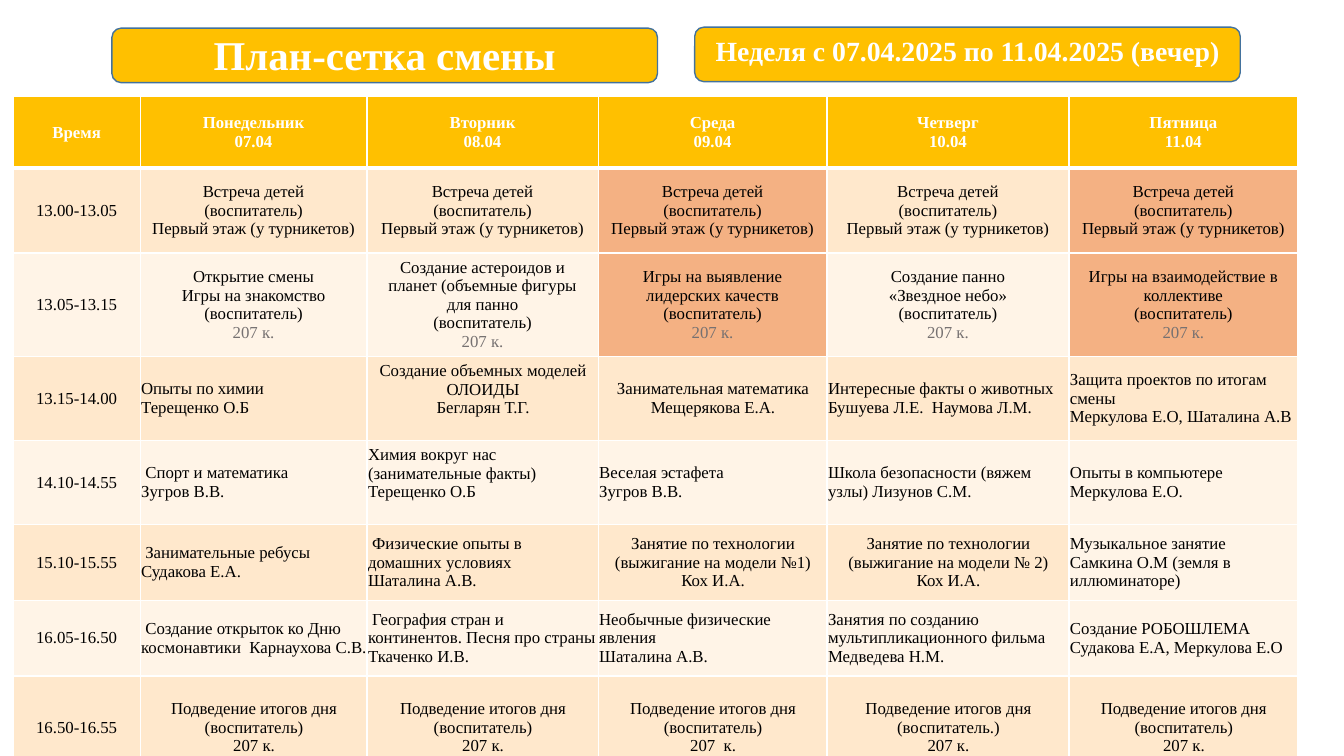
from dataclasses import dataclass

from lxml.etree import SubElement
from pptx import Presentation
from pptx.dml.color import RGBColor
from pptx.enum.shapes import MSO_SHAPE as Shape
from pptx.enum.text import MSO_ANCHOR as Anchor, MSO_AUTO_SIZE as Fit, PP_ALIGN as Align
from pptx.oxml.ns import qn
from pptx.util import Emu, Inches, Pt

WIDE, HIGH = Inches(13.33), Inches(7.5)
FACE = "Times New Roman"
GOLD, WHITE, BLACK, GREY, BLUE = "FFC000", "FFFFFF", "000000", "767171", "43729D"
SAND, CREAM, CORAL = "FFE8CC", "FFF4E7", "F4B183"

WIDTHS = (9.45, 16.88, 17.2, 17.03, 18, 17.03)
MEET = "Встреча детей\n(воспитатель)\nПервый этаж (у турникетов)"
ROOM = "(воспитатель)\n207 к."
RECAP = "Подведение итогов дня\n"


@dataclass
class Banner:
    text: str
    left: float
    top: float
    size: float
    anchor: Anchor


@dataclass
class Slot:
    """One table row; aligns holds l or c for each day, lifted is a column set higher."""
    time: str
    high: float
    fill: str
    days: tuple[str, ...]
    aligns: str = "ccccc"
    tight: bool = True
    lifted: int = 0


PLAN = Banner("План-сетка смены", 8.33, 3.73, 29.2, Anchor.BOTTOM)
WEEK = Banner("Неделя с 07.04.2025 по 11.04.2025 (вечер)", 51.69, 3.6, 19.8, Anchor.MIDDLE)
SLOTS = (
    Slot("Время", 9.47, GOLD, (
        "Понедельник\n07.04", "Вторник\n08.04", "Среда\n09.04",
        "Четверг\n10.04", "Пятница\n11.04"), tight=False),
    Slot("13.00-13.05", 11.2, SAND, (MEET,) * 5, tight=False),
    Slot("13.05-13.15", 11.2, CREAM, (
        "Открытие смены\nИгры на знакомство\n" + ROOM,
        "Создание астероидов и планет (объемные фигуры для панно\n" + ROOM,
        "Игры на выявление лидерских качеств\n" + ROOM,
        "Создание панно\n«Звездное небо»\n" + ROOM,
        "Игры на взаимодействие в коллективе\n" + ROOM), tight=False),
    Slot("13.15-14.00", 10, SAND, (
        "Опыты по химии\nТерещенко О.Б",
        "Создание объемных моделей ОЛОИДЫ\nБегларян Т.Г.",
        "Занимательная математика\nМещерякова Е.А.",
        "Интересные факты о животных\nБушуева Л.Е.  Наумова Л.М.",
        "Защита проектов по итогам смены\nМеркулова Е.О, Шаталина А.В"),
        "lccll", lifted=2),
    Slot("14.10-14.55", 10, CREAM, (
        " Спорт и математика\nЗугров В.В.",
        "Химия вокруг нас (занимательные факты) Терещенко О.Б",
        "Веселая эстафета\nЗугров В.В.",
        "Школа безопасности (вяжем узлы) Лизунов С.М.",
        "Опыты в компьютере\nМеркулова Е.О."), "lllll", lifted=2),
    Slot("15.10-15.55", 10, SAND, (
        " Занимательные ребусы Судакова Е.А.",
        " Физические опыты в домашних условиях\nШаталина А.В.",
        "Занятие по технологии (выжигание на модели №1)\nКох И.А.",
        "Занятие по технологии (выжигание на модели № 2)\nКох И.А.",
        "Музыкальное занятие\nСамкина О.М (земля в иллюминаторе)"), "llccl"),
    Slot("16.05-16.50", 10, CREAM, (
        " Создание открыток ко Дню космонавтики  Карнаухова С.В.",
        " География стран и континентов. Песня про страны\nТкаченко И.В.",
        "Необычные физические явления\nШаталина А.В.",
        "Занятия по созданию мультипликационного фильма\nМедведева Н.М.",
        "Создание РОБОШЛЕМА\nСудакова Е.А, Меркулова Е.О"), "lllll"),
    Slot("16.50-16.55", 13.6, SAND, (
        RECAP + ROOM, RECAP + ROOM, RECAP + "(воспитатель)\n207  к.",
        RECAP + "(воспитатель.)\n207 к.", RECAP + ROOM)),
)
ACCENTS = {(1, 3): CORAL, (1, 5): CORAL, (2, 3): CORAL, (2, 5): CORAL, (5, 5): CREAM}


def across(share: float) -> Emu:
    """Percent of the slide's width."""
    return Emu(round(WIDE * share / 100))


def down(share: float) -> Emu:
    """Percent of the slide's height."""
    return Emu(round(HIGH * share / 100))


def paint(target, tone: str) -> None:
    """Colour a fill, which is made solid, or a font or line colour."""
    if hasattr(target, "solid"):
        target.solid()
        target = target.fore_color
    target.rgb = RGBColor.from_string(tone)


def style(para, size: float, tone: str, bold: bool, align: Align) -> None:
    para.alignment = align
    for run in para.runs:
        run.font.name, run.font.size, run.font.bold = FACE, Pt(size), bold
        paint(run.font.color, tone)


def place(shape, banner: Banner) -> None:
    shape.left, shape.top = across(banner.left), down(banner.top)
    shape.width, shape.height = across(40.59), down(7.2)


def draw_panel(slide, banner: Banner):
    panel = slide.shapes.add_shape(Shape.ROUNDED_RECTANGLE, 0, 0, 0, 0)
    place(panel, banner)
    panel.shadow.inherit = False
    paint(panel.fill, GOLD)
    paint(panel.line.color, BLUE)
    panel.line.width = Pt(1)
    return panel


def write(shape, banner: Banner) -> None:
    frame = shape.text_frame
    frame.text = banner.text
    frame.word_wrap, frame.auto_size = True, Fit.NONE
    frame.vertical_anchor = banner.anchor
    para = frame.paragraphs[0]
    para.line_spacing = 0.7
    style(para, banner.size, WHITE, True, Align.CENTER)


def draw_title(slide) -> None:
    """Lay the title placeholder over its rounded panel."""
    panel, title = draw_panel(slide, PLAN), slide.shapes.title
    panel.element.addnext(title.element)
    place(title, PLAN)
    write(title, PLAN)


def edge(cell, row: int) -> None:
    """White cell borders, thick between the head and the first slot."""
    props = cell._tc.get_or_add_tcPr()
    for side in "LRTB":
        thick = (row, side) in ((0, "B"), (1, "T"))
        line = SubElement(props, qn(f"a:ln{side}"), w=str(Pt(3 if thick else 0.96)))
        fill = SubElement(line, qn("a:solidFill"))
        SubElement(fill, qn("a:srgbClr"), val=WHITE)


def fill_cell(cell, row: int, col: int, slot: Slot) -> None:
    edge(cell, row)
    paint(cell.fill, ACCENTS.get((row, col), slot.fill))
    cell.vertical_anchor = Anchor.MIDDLE
    if col and slot.tight:
        cell.margin_left, cell.margin_right = Inches(0.01), 0
    if col and col == slot.lifted:
        cell.margin_bottom = Inches(0.23)
    cell.text_frame.text = (slot.time, *slot.days)[col]
    align = Align.LEFT if ("c" + slot.aligns)[col] == "l" else Align.CENTER
    for para in cell.text_frame.paragraphs:
        tone = WHITE if row == 0 else GREY if row == 2 and para.text == "207 к." else BLACK
        style(para, 12, tone, row == 0, align)


def draw_plan(slide) -> None:
    table = slide.shapes.add_table(
        len(SLOTS), len(WIDTHS), across(0.98), down(12.8),
        across(sum(WIDTHS)), down(sum(slot.high for slot in SLOTS))).table
    for col, wide in enumerate(WIDTHS):
        table.columns[col].width = across(wide)
    for row, slot in enumerate(SLOTS):
        table.rows[row].height = down(slot.high)
        for col in range(len(WIDTHS)):
            fill_cell(table.cell(row, col), row, col, slot)


def main() -> None:
    deck = Presentation()
    deck.slide_width, deck.slide_height = WIDE, HIGH
    slide = deck.slides.add_slide(deck.slide_layouts[5])
    draw_plan(slide)
    draw_title(slide)
    write(draw_panel(slide, WEEK), WEEK)
    deck.save("out.pptx")


if __name__ == "__main__":
    main()
